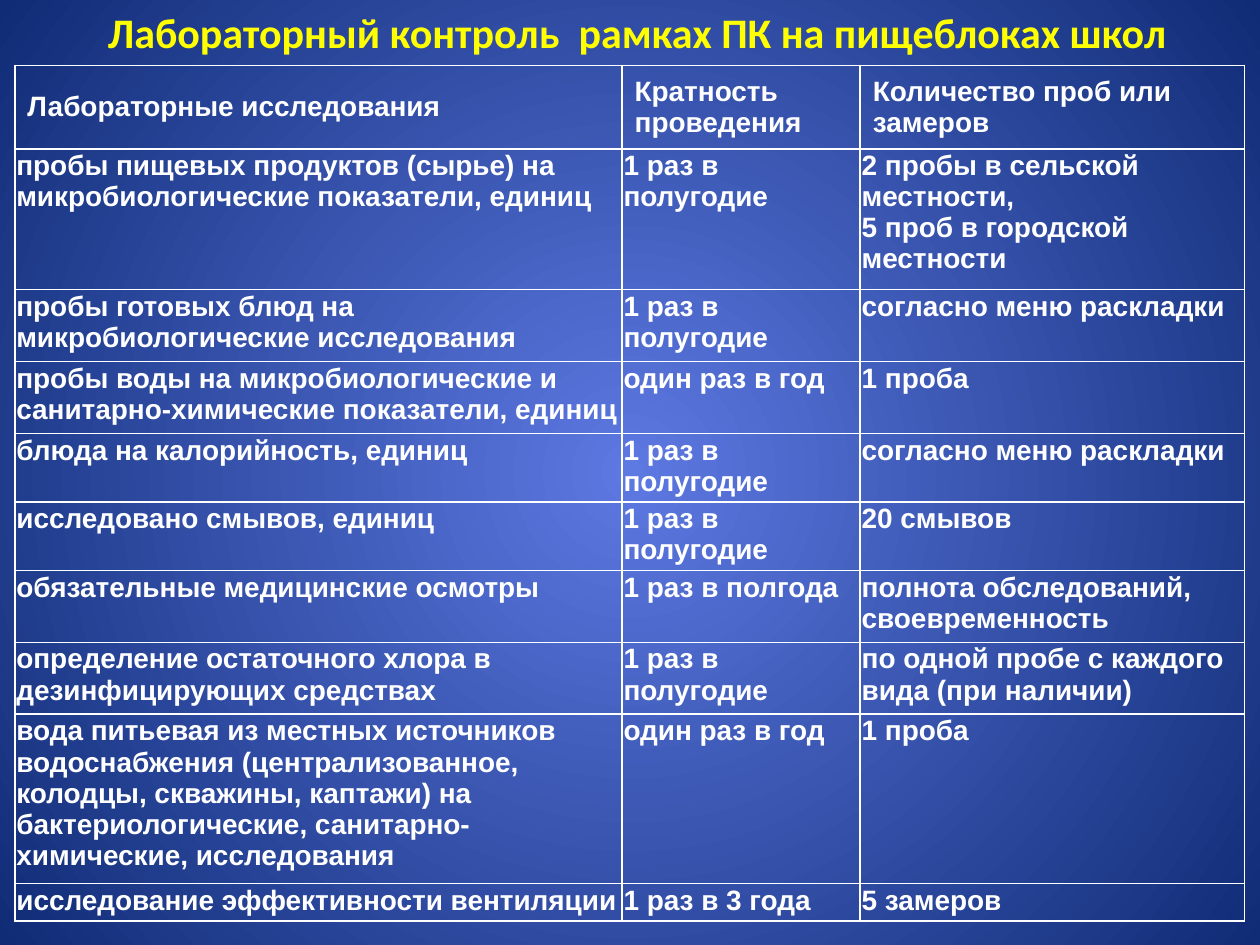
from dataclasses import dataclass

from lxml.etree import SubElement
from pptx import Presentation
from pptx.dml.color import RGBColor
from pptx.enum.text import MSO_ANCHOR, PP_ALIGN
from pptx.oxml.ns import qn
from pptx.util import Cm, Pt

COLORS = {
    "title": "FFFF00",
    "table": "FFFFFF",
    "center": "5D79E2",
    "edge": "102C76",
}
COLUMN_WIDTHS = (12.24, 4.8, 7.75)
TABLE_LEFT, TABLE_TOP = 0.3, 1.32
BODY_MARGIN = Cm(0.03)
HALF_YEARLY = "1 раз в полугодие"
YEARLY = "один раз в год"


@dataclass
class ControlRow:
    height: float
    study: str
    frequency: str
    amount: str


HEADER = ControlRow(1.68, "Лабораторные исследования", "Кратность проведения",
                    "Количество проб или замеров")
CONTROLS = [
    ControlRow(2.84, "пробы пищевых продуктов (сырье) на микробиологические показатели, единиц",
               HALF_YEARLY, "2 пробы в сельской местности,\n5 проб в городской местности"),
    ControlRow(1.45, "пробы готовых блюд на микробиологические исследования",
               HALF_YEARLY, "согласно меню раскладки"),
    ControlRow(1.45, "пробы воды на микробиологические и санитарно-химические показатели, единиц",
               YEARLY, "1 проба"),
    ControlRow(1.38, "блюда на калорийность, единиц", HALF_YEARLY, "согласно меню раскладки"),
    ControlRow(1.38, "исследовано смывов, единиц", HALF_YEARLY, "20 смывов"),
    ControlRow(1.45, "обязательные медицинские осмотры", "1 раз в полгода",
               "полнота обследований, своевременность"),
    ControlRow(1.45, "определение остаточного хлора в дезинфицирующих средствах",
               HALF_YEARLY, "по одной пробе с каждого вида (при наличии)"),
    ControlRow(3.41, "вода питьевая из местных источников водоснабжения (централизованное, "
               "колодцы, скважины, каптажи) на бактериологические, "
               "санитарно-химические, исследования", YEARLY, "1 проба"),
    ControlRow(0.76, "исследование эффективности вентиляции", "1 раз в 3 года", "5 замеров"),
]


def add_text(paragraph, text: str, font_name: str, size: int, color: str) -> None:
    run = paragraph.add_run()
    run.text = text
    run.font.name = font_name
    run.font.size = Pt(size)
    run.font.bold = True
    run.font.color.rgb = RGBColor.from_string(COLORS[color])


def paint_background(slide) -> None:
    fill = slide.background.fill
    fill.gradient()
    for stop, color, position in zip(fill.gradient_stops, ("center", "edge"), (0, 1)):
        stop.color.rgb = RGBColor.from_string(COLORS[color])
        stop.position = position
    # Turn the linear gradient into a circular one around the middle
    gradient = slide.element.find(".//" + qn("a:gradFill"))
    gradient.remove(gradient.find(qn("a:lin")))
    circle = SubElement(gradient, qn("a:path"), path="circle")
    SubElement(circle, qn("a:fillToRect"), {side: "50000" for side in "ltrb"})


def add_borders(cell) -> None:
    properties = cell._tc.get_or_add_tcPr()
    for side in ("lnL", "lnR", "lnT", "lnB"):
        line = SubElement(properties, qn(f"a:{side}"), w=str(Pt(1)))
        solid = SubElement(line, qn("a:solidFill"))
        SubElement(solid, qn("a:srgbClr"), val=COLORS["table"])


def fill_cell(cell, text: str, is_header: bool) -> None:
    add_borders(cell)
    cell.fill.background()
    if is_header:
        cell.vertical_anchor = MSO_ANCHOR.MIDDLE
    else:
        cell.margin_left = cell.margin_right = BODY_MARGIN
        cell.margin_top = cell.margin_bottom = BODY_MARGIN
    frame = cell.text_frame
    for index, line in enumerate(text.split("\n")):
        paragraph = frame.add_paragraph() if index else frame.paragraphs[0]
        add_text(paragraph, line, "Arial", 16, "table")


def add_control_table(slide, rows: list[ControlRow]) -> None:
    shape = slide.shapes.add_table(
        len(rows), len(COLUMN_WIDTHS), Cm(TABLE_LEFT), Cm(TABLE_TOP),
        Cm(sum(COLUMN_WIDTHS)), Cm(sum(row.height for row in rows)))
    table = shape.table
    table.first_row = table.horz_banding = False
    for column, width in zip(table.columns, COLUMN_WIDTHS):
        column.width = Cm(width)
    for index, row in enumerate(rows):
        table.rows[index].height = Cm(row.height)
        for cell, text in zip(table.rows[index].cells, (row.study, row.frequency, row.amount)):
            fill_cell(cell, text, is_header=index == 0)


def add_title(slide) -> None:
    frame = slide.shapes.add_textbox(Cm(0.3), Cm(0), Cm(25.1), Cm(1.28)).text_frame
    frame.word_wrap = True
    paragraph = frame.paragraphs[0]
    paragraph.alignment = PP_ALIGN.CENTER
    add_text(paragraph, "Лабораторный контроль  рамках ПК на пищеблоках школ",
             "Calibri", 24, "title")


def main() -> None:
    presentation = Presentation()
    presentation.slide_width, presentation.slide_height = Cm(25.4), Cm(19.05)
    slide = presentation.slides.add_slide(presentation.slide_layouts[6])
    paint_background(slide)
    add_control_table(slide, [HEADER, *CONTROLS])
    add_title(slide)
    presentation.save("out.pptx")


if __name__ == "__main__":
    main()
